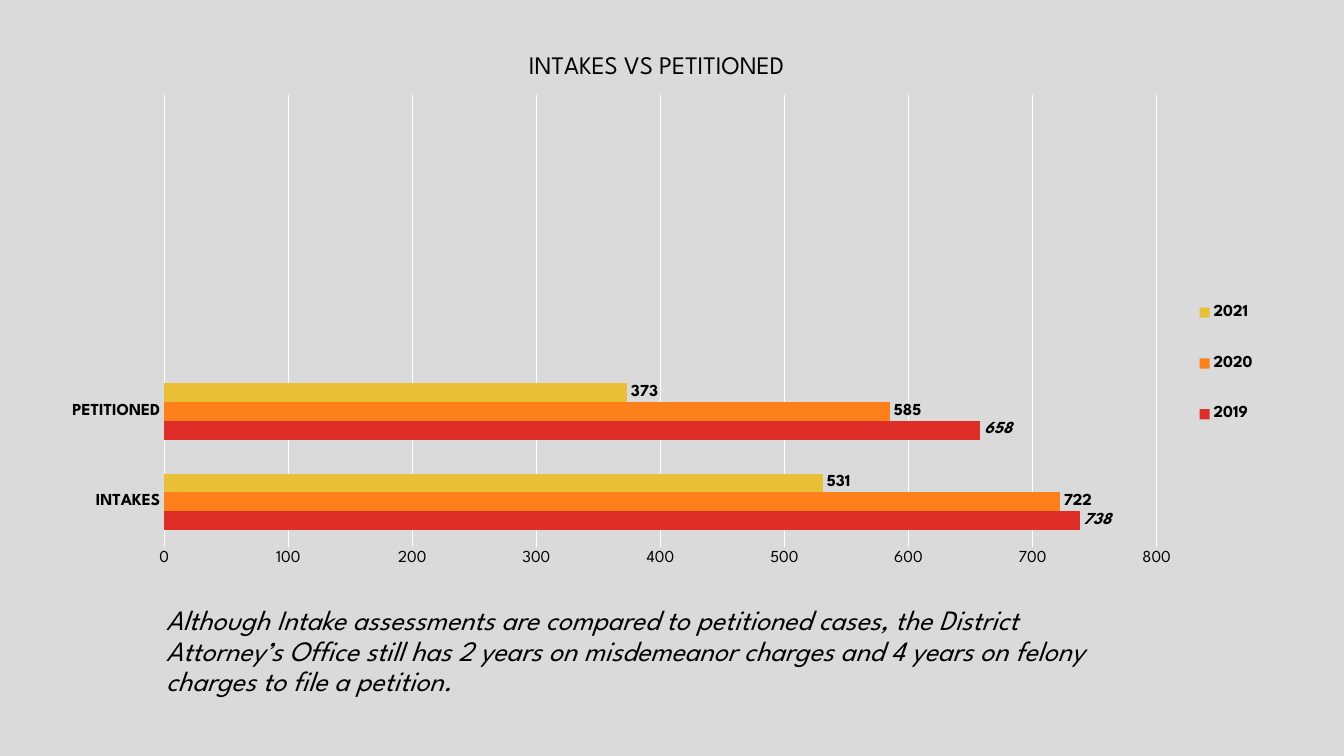
from pptx import Presentation
from pptx.chart.data import CategoryChartData
from pptx.dml.color import RGBColor
from pptx.enum.chart import XL_CHART_TYPE, XL_LABEL_POSITION, XL_LEGEND_POSITION, XL_TICK_MARK
from pptx.oxml import parse_xml
from pptx.oxml.ns import nsdecls, qn
from pptx.util import Pt

FACE = "League Spartan"
TITLE = "INTAKES VS PETITIONED"
NOTE = (
    "Although Intake assessments are compared to petitioned cases, the District "
    "Attorney’s Office still has 2 years on misdemeanor charges and 4 years on "
    "felony charges to file a petition."
)
GROUPS = ["INTAKES", "PETITIONED", "", "", ""]
YEARS = [
    ("2019", [738, 658], "DF2E28", True),
    ("2020", [722, 585], "FE801A", False),
    ("2021", [531, 373], "E9BF35", False),
]
BACK, INK, RULE = "DADADA", "000000", "FFFFFF"


def paint(fill, color):
    fill.solid()
    fill.fore_color.rgb = RGBColor.from_string(color)


def style(font, size, bold=False, italic=False):
    font.name, font.size = FACE, Pt(size)
    font.bold, font.italic = bold, italic
    paint(font.fill, INK)


def rule(line):
    line.width = Pt(0.75)
    paint(line.fill, RULE)


def place(part, index, inner=False, **spots):
    for old in part.findall(qn("c:layout")):
        part.remove(old)
    tags = '<c:layoutTarget val="inner"/>' if inner else ""
    tags += '<c:xMode val="edge"/><c:yMode val="edge"/>'
    tags += "".join(f'<c:{key} val="{val}"/>' for key, val in spots.items())
    part.insert(index, parse_xml(
        f'<c:layout {nsdecls("c")}><c:manualLayout>{tags}</c:manualLayout></c:layout>'))


deck = Presentation()
deck.slide_width, deck.slide_height = Pt(960), Pt(540)
slide = deck.slides.add_slide(deck.slide_layouts[6])
paint(slide.background.fill, BACK)

data = CategoryChartData()
data.categories = GROUPS
for year, counts, color, slant in YEARS:
    data.add_series(year, counts + [None] * (len(GROUPS) - len(counts)))
chart = slide.shapes.add_chart(
    XL_CHART_TYPE.BAR_CLUSTERED, Pt(34.56), Pt(19.44), Pt(871.92), Pt(393.84), data
).chart
style(chart.font, 10)

head = chart.chart_title.text_frame
head.text = TITLE
style(head.paragraphs[0].font, 18)
place(chart.chart_title._element, 1, x=0.39, y=0.04)

chart.has_legend = True
legend = chart.legend
legend.position = XL_LEGEND_POSITION.RIGHT
legend.include_in_layout = False
style(legend.font, 12, bold=True)
place(legend._element, 1, x=0.94, y=0.44, w=0.05, h=0.34)

for axis, bold in ((chart.category_axis, True), (chart.value_axis, False)):
    axis.major_tick_mark = axis.minor_tick_mark = XL_TICK_MARK.NONE
    style(axis.tick_labels.font, 12, bold)
rule(chart.category_axis.format.line)
scale = chart.value_axis
scale.minimum_scale, scale.maximum_scale, scale.major_unit = 0, 800, 100
scale.format.line.fill.background()
rule(scale.major_gridlines.format.line)

plot = chart.plots[0]
plot.gap_width, plot.overlap = 182, 0
plot.vary_by_categories = False
for bars, (year, counts, color, slant) in zip(plot.series, YEARS):
    paint(bars.format.fill, color)
    bars.invert_if_negative = False
    tags = bars.data_labels
    tags.show_value = True
    tags.position = XL_LABEL_POSITION.OUTSIDE_END
    style(tags.font, 12, bold=True, italic=slant)
place(chart._chartSpace.chart.plotArea, 0, inner=True, x=0.095, y=0.123, w=0.813, h=0.82)

frame = slide.shapes.add_textbox(Pt(111.6), Pt(429.84), Pt(705.6), Pt(81.36)).text_frame
frame.word_wrap = True
para = frame.paragraphs[0]
para.text = NOTE
para.line_spacing, para.space_before = 0.9, Pt(10)
style(para.font, 20, italic=True)

deck.save("out.pptx")
